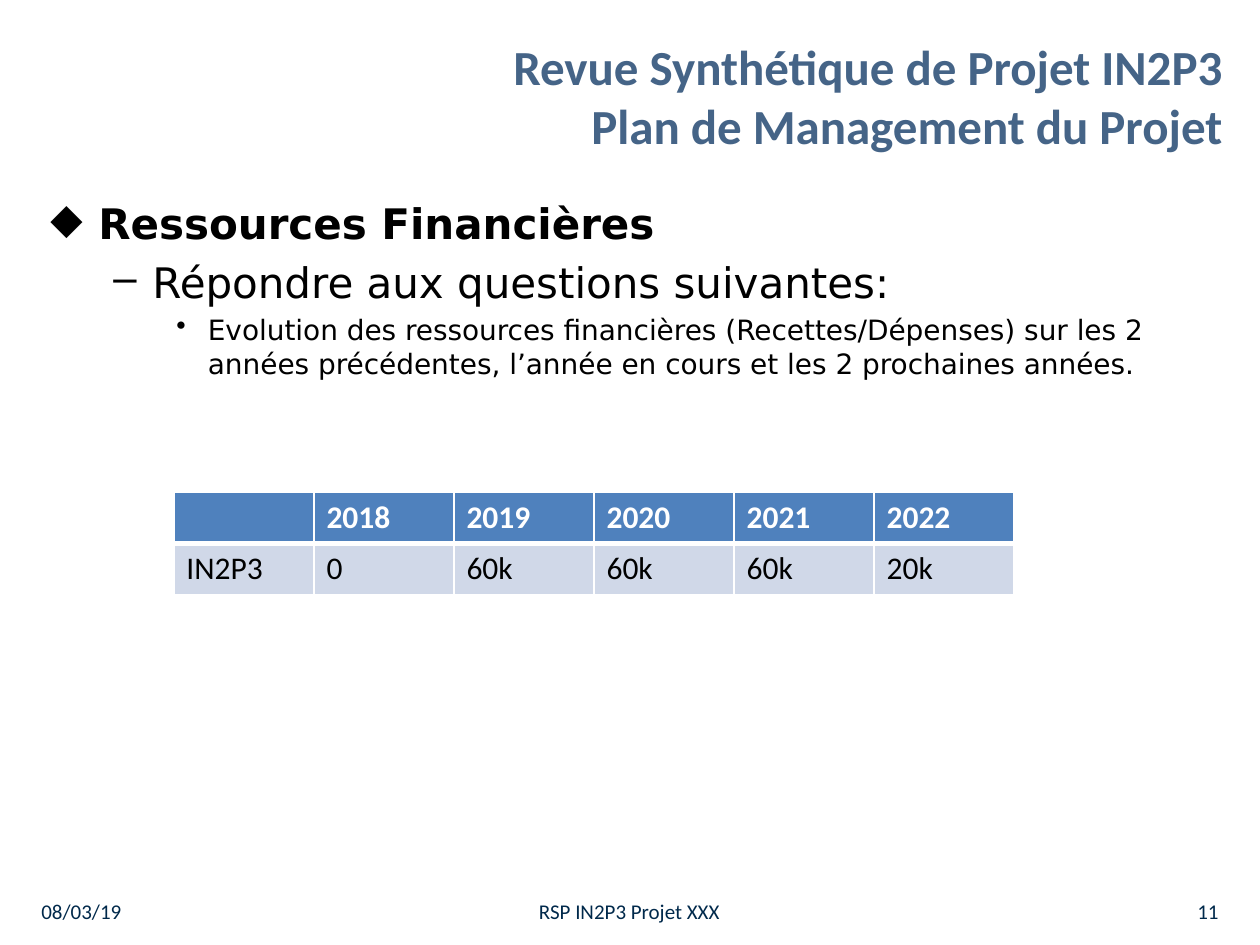
from typing import NamedTuple

from lxml import etree
from pptx import Presentation
from pptx.dml.color import RGBColor
from pptx.enum import text
from pptx.oxml import ns
from pptx.util import Inches, Pt

LEFT, CENTER, RIGHT = text.PP_ALIGN.LEFT, text.PP_ALIGN.CENTER, text.PP_ALIGN.RIGHT


class Footer(NamedTuple):
    content: str
    left: float
    width: float
    align: text.PP_ALIGN


class Bullet(NamedTuple):
    content: str
    char: str
    size: int
    bold: bool
    margin: float
    hang: float
    before: int


FOOTERS = [
    Footer("08/03/19", 0.23, 2.33, LEFT),
    Footer("RSP IN2P3 Projet XXX", 2.95, 4.09, CENTER),
    Footer("11", 7.44, 2.33, RIGHT),
]
BULLETS = [
    Bullet("Ressources Financières", "◆", 24, True, 0.38, 0.38, 0),
    Bullet("Répondre aux questions suivantes:", "–", 24, False, 0.81, 0.31, 5),
    Bullet("Evolution des ressources financières (Recettes/Dépenses) sur les 2 "
           "années précédentes, l’année en cours et les 2 prochaines années.",
           "•", 16, False, 1.25, 0.25, 3),
]
BUDGET = [
    ["", "2018", "2019", "2020", "2021", "2022"],
    ["IN2P3", "0", "60k", "60k", "60k", "20k"],
]


def rgb(value: str) -> RGBColor:
    return RGBColor.from_string(value)


def format_font(font, color: str, **values) -> None:
    for name, value in values.items():
        setattr(font, name, value)
    font.color.rgb = rgb(color)


def add_textbox(s, left: float, top: float, width: float, height: float):
    tf = s.shapes.add_textbox(*map(Inches, (left, top, width, height))).text_frame
    tf.word_wrap = True
    return tf


def add_title(s) -> None:
    sp = s.shapes.title
    box = {"left": 3.03, "top": 0.13, "width": 6.77, "height": 1.25}
    for name, value in box.items():
        setattr(sp, name, Inches(value))
    tf = sp.text_frame
    tf.vertical_anchor = text.MSO_ANCHOR.MIDDLE
    p = tf.paragraphs[0]
    p.text = "Revue Synthétique de Projet IN2P3\vPlan de Management du Projet"
    p.alignment = RIGHT
    for r in p.runs:
        format_font(r.font, "456487", name="Calibri", size=Pt(28), bold=True)


def add_footer(s, footer: Footer) -> None:
    tf = add_textbox(s, footer.left, 7.03, footer.width, 0.4)
    tf.vertical_anchor = text.MSO_ANCHOR.MIDDLE
    p = tf.paragraphs[0]
    p.alignment = footer.align
    r = p.add_run()
    r.text = footer.content
    format_font(r.font, "00294B", name="Calibri", size=Pt(12))


def add_bullets(s, bullets: list[Bullet]) -> None:
    tf = add_textbox(s, 0.35, 1.47, 9.45, 1.81)
    tf.margin_left = tf.margin_right = Inches(0.05)
    tf.margin_top = tf.margin_bottom = Inches(0.1)
    for level, bullet in enumerate(bullets):
        p = tf.add_paragraph() if level else tf.paragraphs[0]
        p.level = level
        if bullet.before:
            p.space_before = Pt(bullet.before)
        pPr = p._p.get_or_add_pPr()
        pPr.set("marL", str(Inches(bullet.margin)))
        pPr.set("indent", str(-Inches(bullet.hang)))
        etree.SubElement(pPr, ns.qn("a:buChar"), char=bullet.char)
        r = p.add_run()
        r.text = bullet.content
        format_font(r.font, "000000", name="DejaVu Sans",
                    size=Pt(bullet.size), bold=bullet.bold)


def set_borders(cell, color: str, **widths: float) -> None:
    """Set border widths in points, keyed by side: L, R, T, B."""
    tcPr = cell._tc.get_or_add_tcPr()
    for i, (side, width) in enumerate(widths.items()):
        ln = etree.Element(ns.qn(f"a:ln{side}"), w=str(Pt(width)))
        fill = etree.SubElement(ln, ns.qn("a:solidFill"))
        etree.SubElement(fill, ns.qn("a:srgbClr"), val=color)
        tcPr.insert(i, ln)


def add_budget_table(s, rows: list[list[str]]) -> None:
    frame = s.shapes.add_table(len(rows), len(rows[0]), Inches(1.38), Inches(3.91),
                               Inches(6.67), Inches(0.81))
    table = frame.table
    table.horz_banding = False
    for i, row in enumerate(rows):
        header = i == 0
        for j, content in enumerate(row):
            cell = table.cell(i, j)
            cell.fill.solid()
            cell.fill.fore_color.rgb = rgb("4F81BD" if header else "D0D8E8")
            set_borders(cell, "FFFFFF", L=1, R=1,
                        T=1 if header else 3, B=3 if header else 1)
            if content:
                r = cell.text_frame.paragraphs[0].add_run()
                r.text = content
                format_font(r.font, "FFFFFF" if header else "000000",
                            name="Calibri", size=Pt(18), bold=header)


def main() -> None:
    prs = Presentation()
    prs.slide_width, prs.slide_height = Inches(10), Inches(7.5)
    s = prs.slides.add_slide(prs.slide_layouts[5])
    add_title(s)
    for footer in FOOTERS:
        add_footer(s, footer)
    add_bullets(s, BULLETS)
    add_budget_table(s, BUDGET)
    prs.save("out.pptx")


if __name__ == "__main__":
    main()
